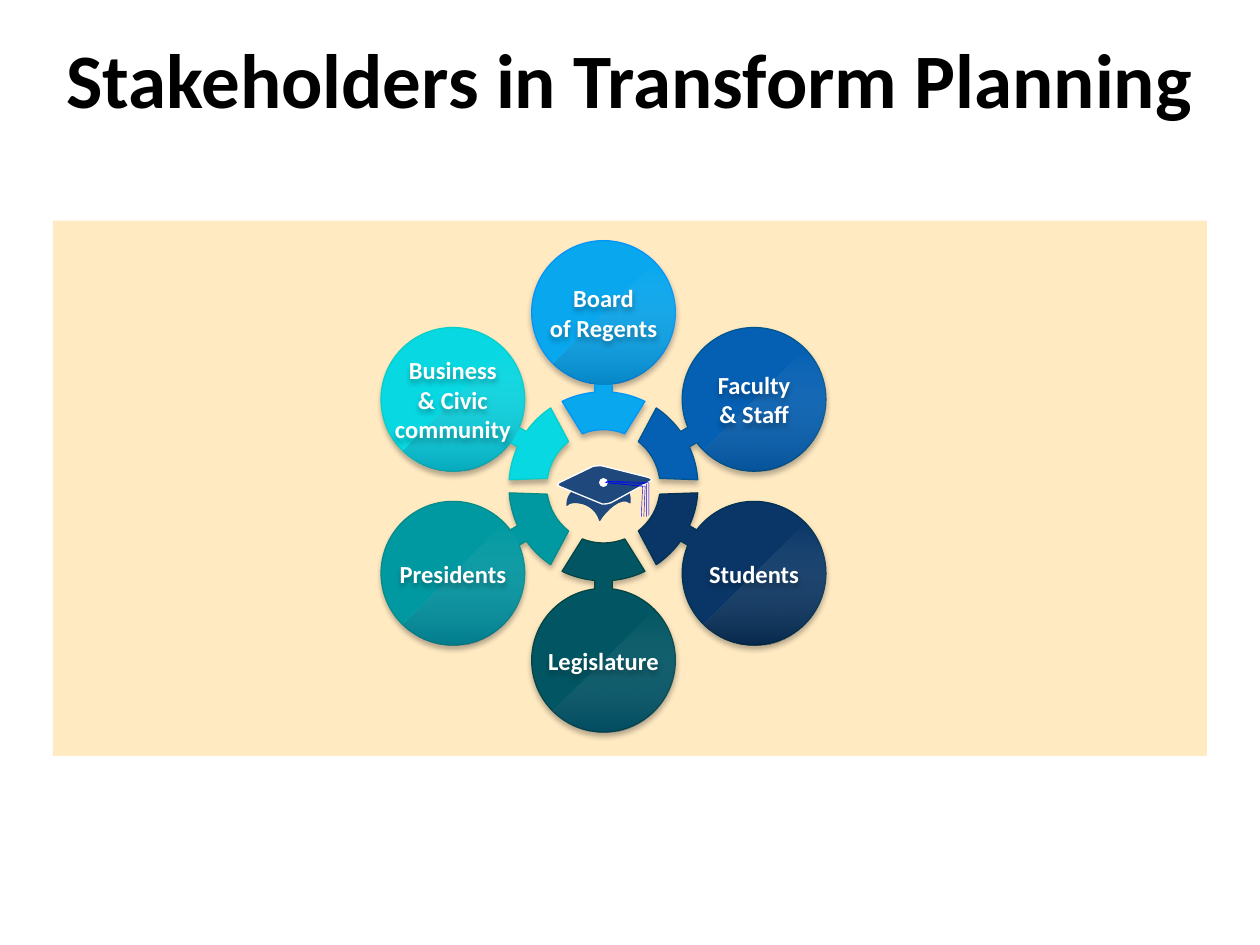
from math import asin, cos, degrees, radians, sin, tan

from lxml.etree import SubElement
from pptx import Presentation
from pptx.dml.color import RGBColor
from pptx.enum.shapes import MSO_SHAPE as Shape
from pptx.enum.text import MSO_ANCHOR as Anchor, MSO_AUTO_SIZE as AutoSize, PP_ALIGN as Align
from pptx.oxml.ns import qn
from pptx.util import Inches, Pt

COLS, ROWS = 10, 7.5
CELL = Inches(1)
HUB = (4.79, 3.86)
ORBIT, DISC, RING_IN, RING_OUT = 1.38, 0.57, 0.45, 0.75
NECK = 0.07
SPREAD_IN, SPREAD_OUT = 22, 26
LABEL_WIDTH, LINE_HEIGHT = 1.1, 0.24

COLORS = {
    "panel": "FFBC37", "title": "000000", "white": "FFFFFF", "shade": "01315D",
    "deep_shade": "000C16", "cap": "1F497D", "tassel": "0000FF",
}

STAKEHOLDERS = [
    ("Board\nof Regents", 2, "08A7EE", "0195F9", "shade"),
    ("Faculty\n& Staff", 2, "0560B3", "01568F", "shade"),
    ("Students", 1, "093667", "013253", "deep_shade"),
    ("Legislature", 1, "025663", "034543", "shade"),
    ("Presidents", 1, "0199A1", "048C89", "shade"),
    ("Business\n& Civic community", 3, "08D8E2", "06CEC9", "shade"),
]

CAP_BASE = [
    ((4.76, 3.87),),
    ((4.76, 3.87), (4.5, 3.81), (4.5, 4.01)),
    ((4.52, 3.97), (4.71, 3.97), (4.76, 4.13)),
    ((4.8, 4.06), (4.93, 3.93), (5, 3.99)),
    ((5.01, 3.94), (4.98, 3.87), (4.96, 3.87)),
]
CAP_BOARD = [
    ((4.44, 3.86),),
    ((4.42, 3.85), (4.42, 3.84), (4.44, 3.83)),
    ((4.71, 3.7),),
    ((4.73, 3.7), (4.77, 3.69), (4.79, 3.7)),
    ((5.15, 3.79),),
    ((5.17, 3.8), (5.18, 3.81), (5.16, 3.82)),
    ((4.85, 3.99),),
    ((4.83, 4), (4.8, 4), (4.78, 4)),
]
TASSEL = [
    [(4.83, 3.82), (5.15, 3.83), (5.15, 4.09)],
    [(4.81, 3.82), (5.13, 3.84), (5.13, 4.1)],
    [(4.8, 3.83), (5.12, 3.86), (5.11, 4.1)],
    [(4.81, 3.83), (5.1, 3.86), (5.09, 4.1)],
]


def rgb(color):
    return RGBColor.from_string(COLORS.get(color, color))


def cells(*lengths):
    return [round(length * CELL) for length in lengths]


def arc(center, radius, start, end, pieces=1):
    sweep = radians(end - start) / pieces
    reach = 4 / 3 * tan(sweep / 4)

    def spot(angle, pull=0):
        return (center[0] + radius * (cos(angle) - pull * sin(angle)),
                center[1] + radius * (sin(angle) + pull * cos(angle)))

    angles = [radians(start) + sweep * i for i in range(pieces + 1)]
    return [(spot(angles[0]),)] + [
        (spot(a, reach), spot(b, -reach), spot(b)) for a, b in zip(angles, angles[1:])]


def set_alpha(color_parent, percent):
    for color in color_parent.iter(qn("a:srgbClr")):
        SubElement(color, qn("a:alpha"), val=str(percent * 1000))


def add_soft_shadow(shape):
    shape.shadow.inherit = False
    effects = shape._element.spPr.find(qn("a:effectLst"))
    shadow = SubElement(effects, qn("a:outerShdw"), blurRad=str(Pt(3)), dist=str(Pt(2)),
                        dir="5400000", algn="ctr", rotWithShape="0")
    SubElement(shadow, qn("a:srgbClr"), val="000000")
    set_alpha(shadow, 27)


def bend_curves(outline, segments):
    path = next(outline._element.iter(qn("a:path")))
    lines = iter(path.findall(qn("a:lnTo")))
    for segment in segments:
        group = [next(lines) for _ in segment]
        if len(group) == 3:
            bezier = SubElement(path, qn("a:cubicBezTo"))
            group[0].addprevious(bezier)
            for line in group:
                bezier.append(line[0])
                path.remove(line)


def add_outline(slide, segments, fill=None, line=None, width=0.75, close=True):
    (x, y), *rest = [cells(*point) for segment in segments for point in segment]
    builder = slide.shapes.build_freeform(x, y)
    builder.add_line_segments(rest, close=close)
    outline = builder.convert_to_shape()
    bend_curves(outline, segments[1:])
    outline.shadow.inherit = False
    if fill:
        outline.fill.solid()
        outline.fill.fore_color.rgb = rgb(fill)
    else:
        outline.fill.background()
    if line:
        outline.line.color.rgb = rgb(line)
        outline.line.width = Pt(width)
    else:
        outline.line.fill.background()
    return outline


def add_text(slide, text, box, size, color, anchor=Anchor.TOP):
    label = slide.shapes.add_textbox(*cells(*box))
    frame = label.text_frame
    frame.margin_left = frame.margin_right = frame.margin_top = frame.margin_bottom = 0
    frame.word_wrap = True
    frame.auto_size = AutoSize.SHAPE_TO_FIT_TEXT
    frame.vertical_anchor = anchor
    paragraph = frame.paragraphs[0]
    paragraph.text = text
    paragraph.alignment = Align.CENTER
    font = paragraph.font
    font.name, font.size, font.bold = "Calibri", Pt(size), True
    font.color.rgb = rgb(color)
    return label


def add_panel(slide):
    left, top = 0.42, 1.75
    panel = slide.shapes.add_shape(
        Shape.RECTANGLE, *cells(left, top, COLS - 2 * left, ROWS - top - 1.5))
    panel.shadow.inherit = False
    panel.fill.solid()
    panel.fill.fore_color.rgb = rgb("panel")
    set_alpha(panel._element.spPr, 30)
    panel.line.fill.background()


def petal(bearing):
    disc_gap = degrees(asin(NECK / DISC))
    ring_gap = degrees(asin(NECK / RING_OUT))
    local = (arc((ORBIT, 0), DISC, disc_gap - 180, 180 - disc_gap, 8)
             + arc((0, 0), RING_OUT, ring_gap, SPREAD_OUT)
             + arc((0, 0), RING_IN, SPREAD_IN, -SPREAD_IN)
             + arc((0, 0), RING_OUT, -SPREAD_OUT, -ring_gap))
    c, s = cos(radians(bearing)), sin(radians(bearing))
    return [tuple((HUB[0] + u * c - v * s, HUB[1] + u * s + v * c) for u, v in segment)
            for segment in local]


def add_gloss(slide, center, shade):
    gloss = add_outline(slide, arc(center, DISC, -45, 135, 4), "white")
    gloss.fill.gradient()
    gloss.fill.gradient_angle = 90
    opacities = (35 if shade == "deep_shade" else 28, 0)
    gradient = gloss._element.spPr.find(qn("a:gradFill"))
    for stop, color, position in zip(gloss.fill.gradient_stops, (shade, "white"), (0, 1)):
        stop.color.rgb = rgb(color)
        stop.position = position
    for stop, opacity in zip(gradient.iter(qn("a:gs")), opacities):
        set_alpha(stop, opacity)


def add_stakeholders(slide):
    labels = []
    for i, (name, lines, fill, edge, shade) in enumerate(STAKEHOLDERS):
        bearing = 60 * i - 90
        center = (HUB[0] + ORBIT * cos(radians(bearing)),
                  HUB[1] + ORBIT * sin(radians(bearing)))
        add_soft_shadow(add_outline(slide, petal(bearing), fill, edge))
        add_gloss(slide, center, shade)
        height = lines * LINE_HEIGHT
        labels.append((name, (center[0] - LABEL_WIDTH / 2, center[1] - height / 2,
                              LABEL_WIDTH, height)))
    for name, box in labels:
        add_soft_shadow(add_text(slide, name, box, 14, "white", Anchor.MIDDLE))


def add_graduation_cap(slide):
    add_outline(slide, CAP_BASE, "cap", "cap")
    add_outline(slide, CAP_BOARD, "cap", "white")
    add_outline(slide, arc((4.79, 3.83), 0.03, 0, 360, 4), "white", "white")
    for strand in TASSEL:
        add_outline(slide, [(point,) for point in strand], line="tassel", width=0.25, close=False)


def main():
    deck = Presentation()
    deck.slide_width, deck.slide_height = cells(COLS, ROWS)
    slide = deck.slides.add_slide(deck.slide_layouts[6])
    add_panel(slide)
    add_text(slide, "Stakeholders in Transform Planning", (0, 0.25, COLS, 0.74), 44, "title")
    add_stakeholders(slide)
    add_graduation_cap(slide)
    deck.save("out.pptx")


if __name__ == "__main__":
    main()
